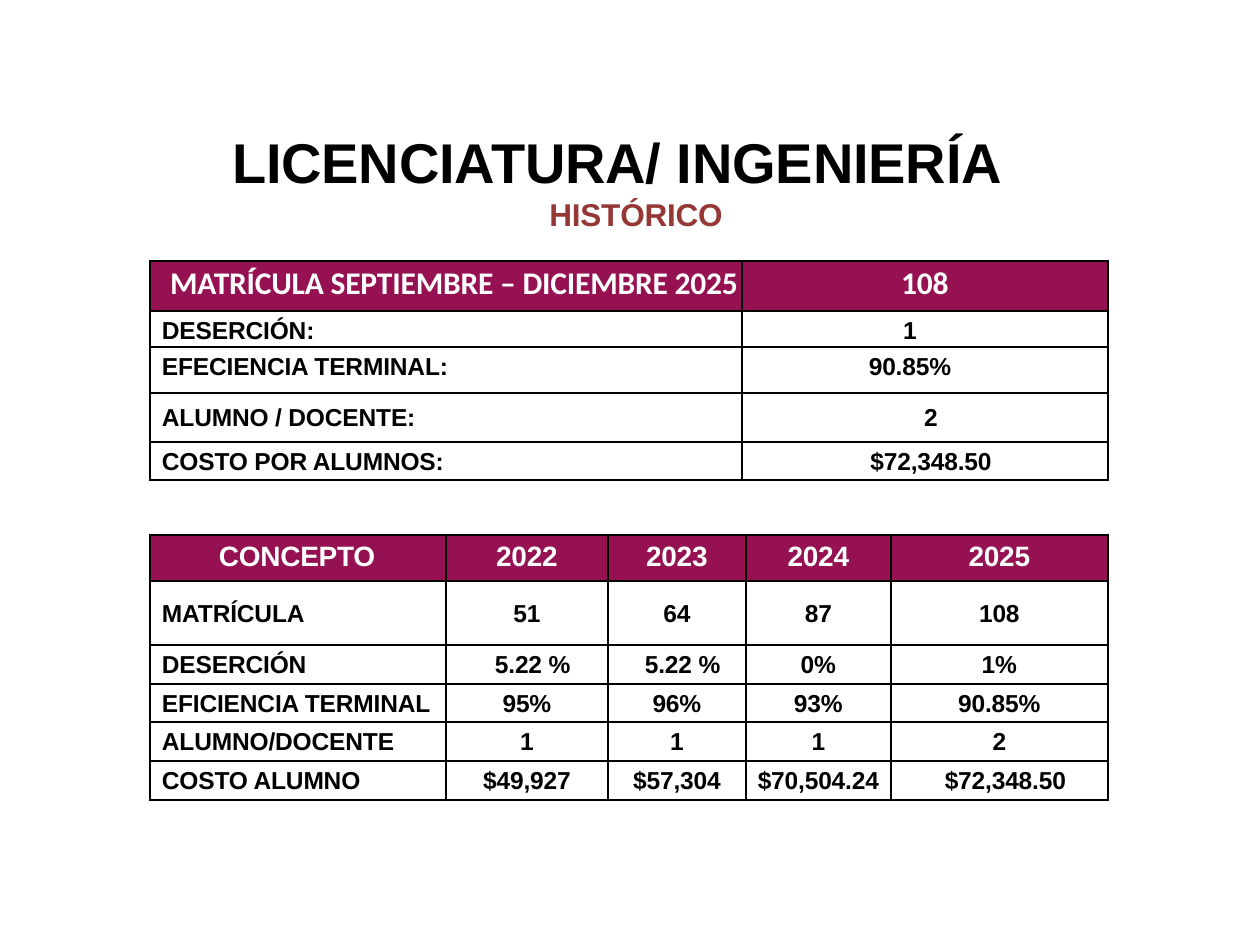
from lxml import etree
from pptx import Presentation
from pptx.dml.color import RGBColor
from pptx.enum.text import MSO_ANCHOR, PP_ALIGN
from pptx.oxml.ns import qn
from pptx.util import Emu, Pt

LEFT, CENTER = PP_ALIGN.LEFT, PP_ALIGN.CENTER
TOP, BOTTOM = MSO_ANCHOR.TOP, MSO_ANCHOR.BOTTOM

THEME = {
    "ink": "000000", "paper": "FFFFFF", "wine": "951151", "brick": "953735",
    "font": "Arial", "banner_font": "Calibri",
    "title": 32, "subtitle": 18, "banner": 18, "header": 16, "body": 14,
}


def px(n):
    return Emu(round(n * 914400 / 126))


def write(paragraph, text, size, color, align, font=THEME["font"]):
    paragraph.alignment = align
    run = paragraph.add_run()
    run.text = text
    run._r.get_or_add_rPr().set("spc", "-10")
    for key, value in {"name": font, "size": Pt(size), "bold": True}.items():
        setattr(run.font, key, value)
    run.font.color.rgb = RGBColor.from_string(color)


prs = Presentation()
prs.slide_width, prs.slide_height = px(1260), px(945)
slide = prs.slides.add_slide(prs.slide_layouts[6])

# Title and subtitle
heading = slide.shapes.add_textbox(px(231), px(125), px(798), px(108)).text_frame
for key, value in {"word_wrap": True, "vertical_anchor": BOTTOM, "margin_left": 0,
                   "margin_right": 0, "margin_top": px(1), "margin_bottom": 0}.items():
    setattr(heading, key, value)
title = heading.paragraphs[0]
write(title, "LICENCIATURA/ INGENIERÍA", THEME["title"], THEME["ink"], LEFT)
title._p.get_or_add_pPr().set("marL", str(px(1)))
subtitle = heading.add_paragraph()
write(subtitle, "HISTÓRICO", THEME["subtitle"], THEME["brick"], CENTER)
subtitle._p.get_or_add_pPr().set("marL", str(px(12)))

# Table contents; "special" maps (row, column) to alignment, left and right margin
summary = {
    "top": 261, "columns": [592, 366], "heights": [50, 36, 46, 49, 38],
    "margins": [4, 6, 6, 11, 6],
    "header_font": THEME["banner_font"], "header_size": THEME["banner"],
    "rows": [
        ["MATRÍCULA SEPTIEMBRE – DICIEMBRE 2025", "108"],
        ["DESERCIÓN:", "1"],
        ["EFECIENCIA TERMINAL:", "90.85%"],
        ["ALUMNO / DOCENTE:", "2"],
        ["COSTO POR ALUMNOS:", "$72,348.50"],
    ],
    "special": {(0, 0): (LEFT, 20, 0), (1, 1): (CENTER, 12, 42), (2, 1): (CENTER, 12, 42),
                (3, 1): (CENTER, 12, 0), (4, 1): (CENTER, 12, 0)},
}
history = {
    "top": 535, "columns": [296, 162, 138, 145, 217], "heights": [46, 64, 39, 38, 39, 39],
    "margins": [6, 19, 6, 6, 6, 6],
    "header_font": THEME["font"], "header_size": THEME["header"],
    "rows": [
        ["CONCEPTO", "2022", "2023", "2024", "2025"],
        ["MATRÍCULA", "51", "64", "87", "108"],
        ["DESERCIÓN", "5.22 %", "5.22 %", "0%", "1%"],
        ["EFICIENCIA TERMINAL", "95%", "96%", "93%", "90.85%"],
        ["ALUMNO/DOCENTE", "1", "1", "1", "2"],
        ["COSTO ALUMNO", "$49,927", "$57,304", "$70,504.24", "$72,348.50"],
    ],
    "special": {(0, 0): (LEFT, 69, 0), (2, 1): (LEFT, 49, 0), (2, 2): (LEFT, 37, 0),
                (5, 4): (CENTER, 12, 0)},
}

# Both tables
for data in (summary, history):
    table = slide.shapes.add_table(
        len(data["rows"]), len(data["columns"]), px(150), px(data["top"]),
        px(sum(data["columns"])), px(sum(data["heights"]))).table
    table.first_row = table.horz_banding = False
    for column, width in zip(table.columns, data["columns"]):
        column.width = px(width)

    for r, texts in enumerate(data["rows"]):
        table.rows[r].height = px(data["heights"][r])
        for c, text in enumerate(texts):
            cell = table.cell(r, c)
            usual = (CENTER, 0, 0) if c else (LEFT, 12, 0)
            align, left, right = data["special"].get((r, c), usual)
            for key, value in {"margin_left": px(left), "margin_right": px(right),
                               "margin_top": px(data["margins"][r]), "margin_bottom": 0,
                               "vertical_anchor": TOP}.items():
                setattr(cell, key, value)

            # Cell borders come before the fill in the XML
            for side in ("a:lnL", "a:lnR", "a:lnT", "a:lnB"):
                line = etree.SubElement(cell._tc.get_or_add_tcPr(), qn(side), w=str(Pt(1)))
                solid = etree.SubElement(line, qn("a:solidFill"))
                etree.SubElement(solid, qn("a:srgbClr"), val=THEME["ink"])

            paragraph = cell.text_frame.paragraphs[0]
            if r == 0:
                cell.fill.solid()
                cell.fill.fore_color.rgb = RGBColor.from_string(THEME["wine"])
                write(paragraph, text, data["header_size"], THEME["paper"], align,
                      data["header_font"])
            else:
                cell.fill.background()
                write(paragraph, text, THEME["body"], THEME["ink"], align)

prs.save("out.pptx")
